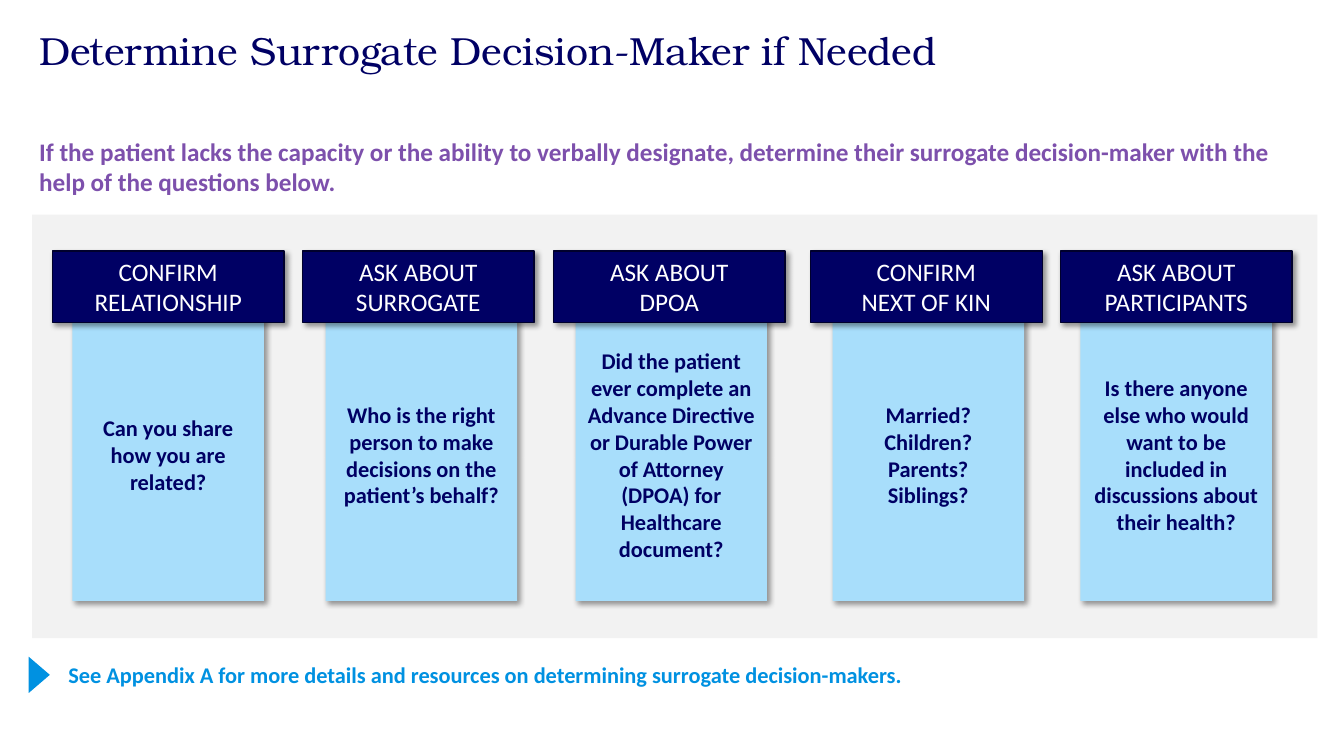
from lxml.etree import SubElement
from pptx import Presentation
from pptx.dml.color import RGBColor
from pptx.enum.shapes import MSO_SHAPE
from pptx.enum.text import MSO_ANCHOR, PP_ALIGN
from pptx.oxml.ns import qn
from pptx.util import Pt

NAVY = RGBColor(0x00, 0x00, 0x64)
DARK_NAVY = RGBColor(0x00, 0x00, 0x2C)
PURPLE = RGBColor(0x7D, 0x50, 0xAC)
BLUE = RGBColor(0x00, 0x91, 0xE1)
PALE_BLUE = RGBColor(0xA8, 0xDE, 0xFB)
GREY = RGBColor(0xF2, 0xF2, 0xF2)
WHITE = RGBColor(0xFF, 0xFF, 0xFF)

STEPS = [
    (14.4, 28.8, "CONFIRM RELATIONSHIP", "Can you share how you are related?"),
    (193, 209.6, "ASK ABOUT SURROGATE",
     "Who is the right person to make decisions on the patient’s behalf?"),
    (372.3, 388.1, "ASK ABOUT\nDPOA",
     "Did the patient ever complete an Advance Directive or Durable Power "
     "of Attorney (DPOA) for Healthcare document?"),
    (555.9, 571.7, "CONFIRM\nNEXT OF KIN",
     "Married?\nChildren?\nParents?\nSiblings?"),
    (734.4, 748.8, "ASK ABOUT PARTICIPANTS",
     "Is there anyone else who would want to be included in discussions "
     "about their health?"),
]


def write(shape, text, size, color, font="Calibri", bold=False,
          align=PP_ALIGN.LEFT, anchor=MSO_ANCHOR.TOP, spacing=None):
    frame = shape.text_frame
    frame.word_wrap = True
    frame.vertical_anchor = anchor
    frame.text = text
    for paragraph in frame.paragraphs:
        paragraph.alignment = align
        paragraph.line_spacing = spacing
        paragraph.font.name = font
        paragraph.font.size = Pt(size)
        paragraph.font.bold = bold
        paragraph.font.color.rgb = color


def add_label(slide, left, top, width, height, text, **style):
    label = slide.shapes.add_textbox(Pt(left), Pt(top), Pt(width), Pt(height))
    write(label, text, **style)


def add_block(slide, left, top, width, height, fill, kind=MSO_SHAPE.RECTANGLE):
    block = slide.shapes.add_shape(kind, Pt(left), Pt(top), Pt(width), Pt(height))
    block.shadow.inherit = False
    block.fill.solid()
    block.fill.fore_color.rgb = fill
    block.line.fill.background()
    return block


def add_shadow(shape):
    effects = shape._element.spPr.find(qn("a:effectLst"))
    shadow = SubElement(effects, qn("a:outerShdw"), blurRad=str(Pt(4)),
                        dist=str(Pt(3)), dir="2700000", algn="tl", rotWithShape="0")
    black = SubElement(shadow, qn("a:srgbClr"), val="000000")
    SubElement(black, qn("a:alpha"), val="40000")


def add_heading(slide, left, top, width):
    add_label(slide, left, top, width, 69,
              "Determine Surrogate Decision-Maker if Needed",
              size=28, color=NAVY, font="TeX Gyre Bonum", spacing=0.9)
    add_label(slide, left, top + 75, width, 50,
              "If the patient lacks the capacity or the ability to verbally "
              "designate, determine their surrogate decision-maker with the "
              "help of the questions below.",
              size=18, color=PURPLE, bold=True)


def add_steps(slide, left, top, width, height):
    add_block(slide, left, top, width, height, GREY)
    for header_offset, card_offset, header_text, question in STEPS:
        card = add_block(slide, left + card_offset, top + 67, 136.8, 208.8, PALE_BLUE)
        add_shadow(card)
        write(card, question, size=16, color=NAVY, bold=True,
              align=PP_ALIGN.CENTER, anchor=MSO_ANCHOR.MIDDLE)
        header = add_block(slide, left + header_offset, top + 25.9, 165.6, 51, NAVY)
        header.line.color.rgb = DARK_NAVY
        header.line.width = Pt(1)
        add_shadow(header)
        write(header, header_text, size=18, color=WHITE, align=PP_ALIGN.CENTER)


def add_appendix_note(slide, left, top, width, height):
    add_label(slide, left + 26.7, top, width - 26.7, height,
              "See Appendix A for more details and resources on determining "
              "surrogate decision-makers.",
              size=16, color=BLUE, bold=True, anchor=MSO_ANCHOR.MIDDLE)
    pointer = add_block(slide, left, top + 5.8, 25.9, 15.1, BLUE,
                        MSO_SHAPE.ISOSCELES_TRIANGLE)
    pointer.rotation = 90


def main():
    deck = Presentation()
    deck.slide_width, deck.slide_height = Pt(960), Pt(540)
    slide = deck.slides.add_slide(deck.slide_layouts[6])
    add_heading(slide, 20.9, 18.7, 918)
    add_steps(slide, 23, 153.4, 918, 302.4)
    add_appendix_note(slide, 15.1, 468.7, 919.5, 26.6)
    deck.save("out.pptx")


if __name__ == "__main__":
    main()
